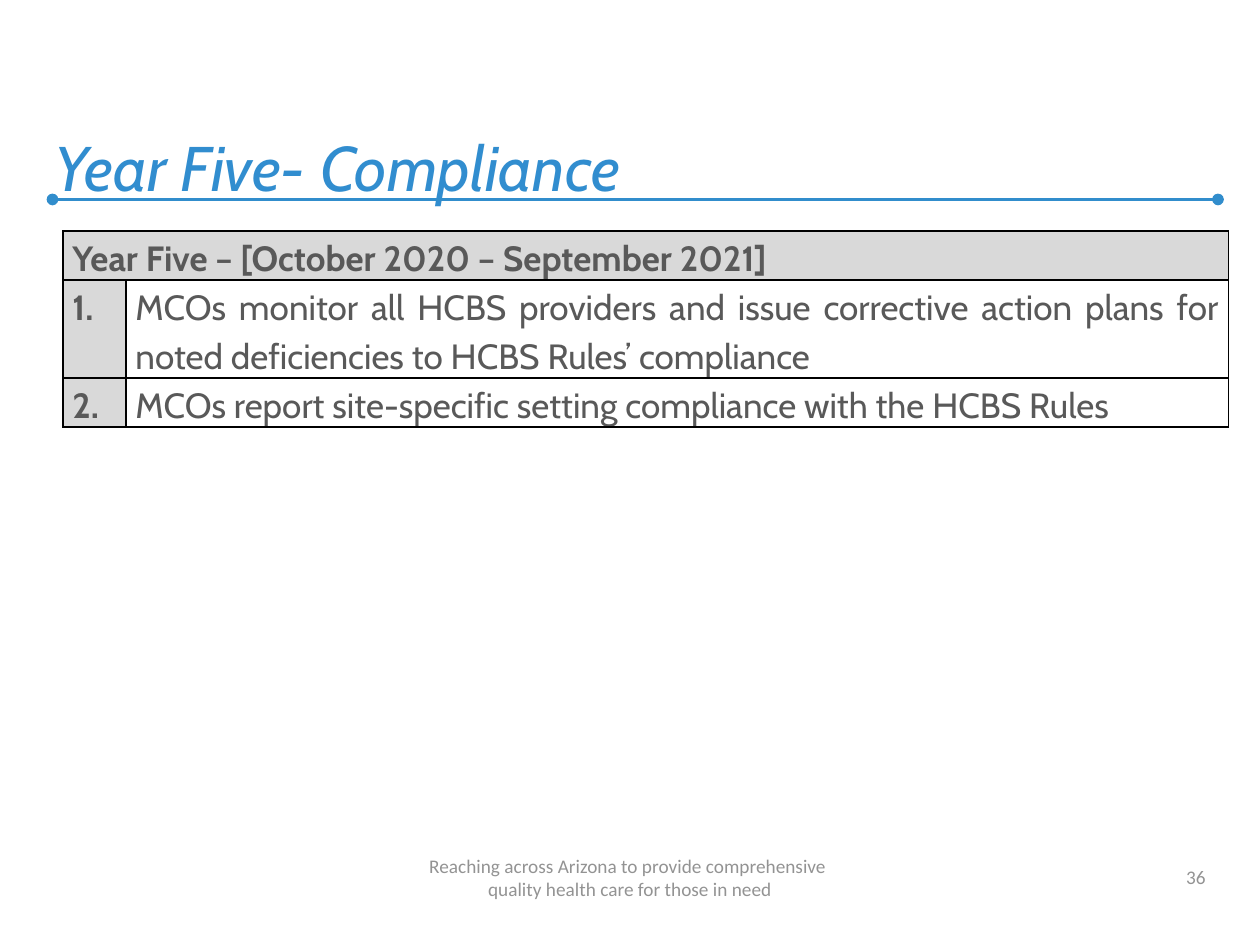
from lxml.etree import SubElement
from pptx import Presentation
from pptx.dml.color import RGBColor
from pptx.enum.shapes import MSO_CONNECTOR
from pptx.enum.text import MSO_ANCHOR as Anchor, PP_ALIGN as Align
from pptx.oxml import parse_xml
from pptx.oxml.ns import nsdecls, qn
from pptx.util import Pt

COLORS = {
    "title": "318DCF",
    "rule": "318DCC",
    "body": "595959",
    "footer": "939393",
    "label_fill": "D9D9D9",
    "border": "000000",
}
HEADING = "Year Five – [October 2020 – September 2021]"
REQUIREMENTS = [
    "MCOs monitor all HCBS providers and issue corrective action plans for "
    "noted deficiencies to HCBS Rules’ compliance",
    "MCOs report site-specific setting compliance with the HCBS Rules",
]
FOOTER_LINES = [
    "Reaching across Arizona to provide comprehensive ",
    "quality health care for those in need",
]


def color(name):
    return RGBColor.from_string(COLORS[name])


def add_run(paragraph, text, font_name, size, color_name, bold=False, italic=False):
    run = paragraph.add_run()
    run.text = text
    font = run.font
    font.name, font.size = font_name, Pt(size)
    font.bold, font.italic = bold, italic
    font.color.rgb = color(color_name)


def place(shape, left, top, width, height):
    shape.left, shape.top = Pt(left), Pt(top)
    shape.width, shape.height = Pt(width), Pt(height)


def add_title(slide, text):
    title = slide.shapes.title
    place(title, 24, 24, 678, 96)
    title.text_frame.vertical_anchor = Anchor.BOTTOM
    paragraph = title.text_frame.paragraphs[0]
    paragraph.alignment = Align.LEFT
    add_run(paragraph, text, "Cabin", 36, "title", italic=True)


def add_title_rule(slide):
    rule = slide.shapes.add_connector(
        MSO_CONNECTOR.STRAIGHT, Pt(30), Pt(114), Pt(696), Pt(114))
    rule.line.color.rgb = color("rule")
    rule.line.width = Pt(2.25)
    properties = rule._element.spPr
    line = properties.find(qn("a:ln"))
    for end in ("a:headEnd", "a:tailEnd"):
        SubElement(line, qn(end), type="oval")
    SubElement(properties, qn("a:effectLst"))


def add_footer_text(slide, lines, left, top, width, height, alignment):
    box = slide.shapes.add_textbox(Pt(left), Pt(top), Pt(width), Pt(height))
    frame = box.text_frame
    frame.word_wrap = True
    frame.vertical_anchor = Anchor.BOTTOM
    paragraph = frame.paragraphs[0]
    paragraph.alignment = alignment
    paragraph.line_spacing = Pt(13)
    for index, line in enumerate(lines):
        if index:
            paragraph.add_line_break()
        add_run(paragraph, line, "Calibri", 11, "footer")


def add_borders(cell):
    properties = cell._tc.get_or_add_tcPr()
    for index, side in enumerate(("lnL", "lnR", "lnT", "lnB")):
        properties.insert(index, parse_xml(
            f'<a:{side} {nsdecls("a")} w="{Pt(1)}"><a:solidFill>'
            f'<a:srgbClr val="{COLORS["border"]}"/></a:solidFill></a:{side}>'))


def fill_cell(cell, text, is_label):
    cell.margin_left = cell.margin_right = Pt(5.4)
    cell.margin_top = cell.margin_bottom = Pt(0)
    paragraph = cell.text_frame.paragraphs[0]
    paragraph.alignment = Align.JUSTIFY
    paragraph.line_spacing = 1.15
    paragraph.space_after = Pt(10)
    add_run(paragraph, text, "Cabin", 20, "body", bold=is_label)
    if is_label:
        cell.fill.solid()
        cell.fill.fore_color.rgb = color("label_fill")


def add_requirements_table(slide):
    row_heights, column_widths = [28, 56, 28], [36, 630]
    table = slide.shapes.add_table(
        len(row_heights), len(column_widths), Pt(36), Pt(132),
        Pt(sum(column_widths)), Pt(sum(row_heights))).table
    table.first_row = table.horz_banding = False
    for row, height in zip(table.rows, row_heights):
        row.height = Pt(height)
    for column, width in zip(table.columns, column_widths):
        column.width = Pt(width)
    for cell in table.iter_cells():
        cell.fill.background()
        add_borders(cell)

    table.cell(0, 0).merge(table.cell(0, 1))
    fill_cell(table.cell(0, 0), HEADING, True)
    for number, requirement in enumerate(REQUIREMENTS, start=1):
        fill_cell(table.cell(number, 0), f"{number}.", True)
        fill_cell(table.cell(number, 1), requirement, False)


def main():
    presentation = Presentation()
    presentation.slide_width, presentation.slide_height = Pt(720), Pt(540)
    slide = presentation.slides.add_slide(presentation.slide_layouts[5])
    add_title_rule(slide)
    add_title(slide, "Year Five- Compliance")
    add_footer_text(slide, ["36"], 528, 488, 168, 23, Align.RIGHT)
    add_footer_text(slide, FOOTER_LINES, 0, 488, 720, 30, Align.CENTER)
    add_requirements_table(slide)
    presentation.save("out.pptx")


if __name__ == "__main__":
    main()
